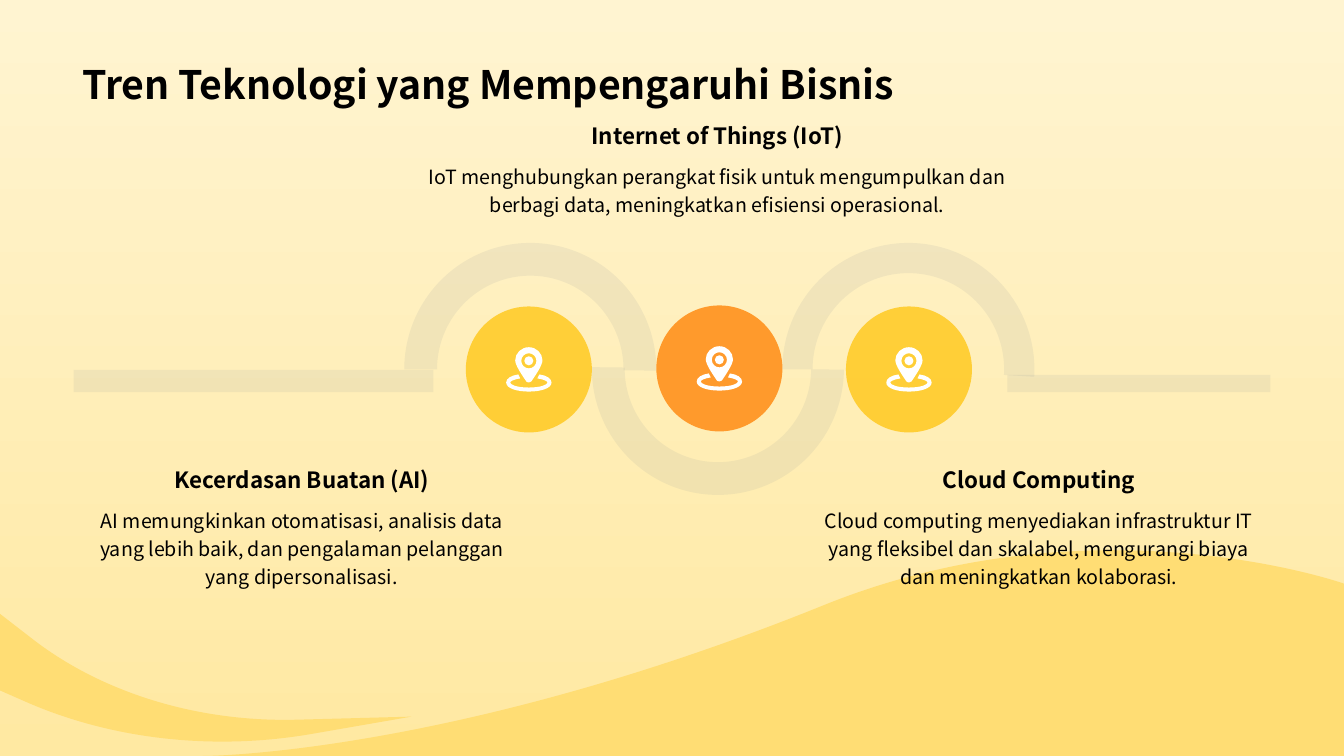
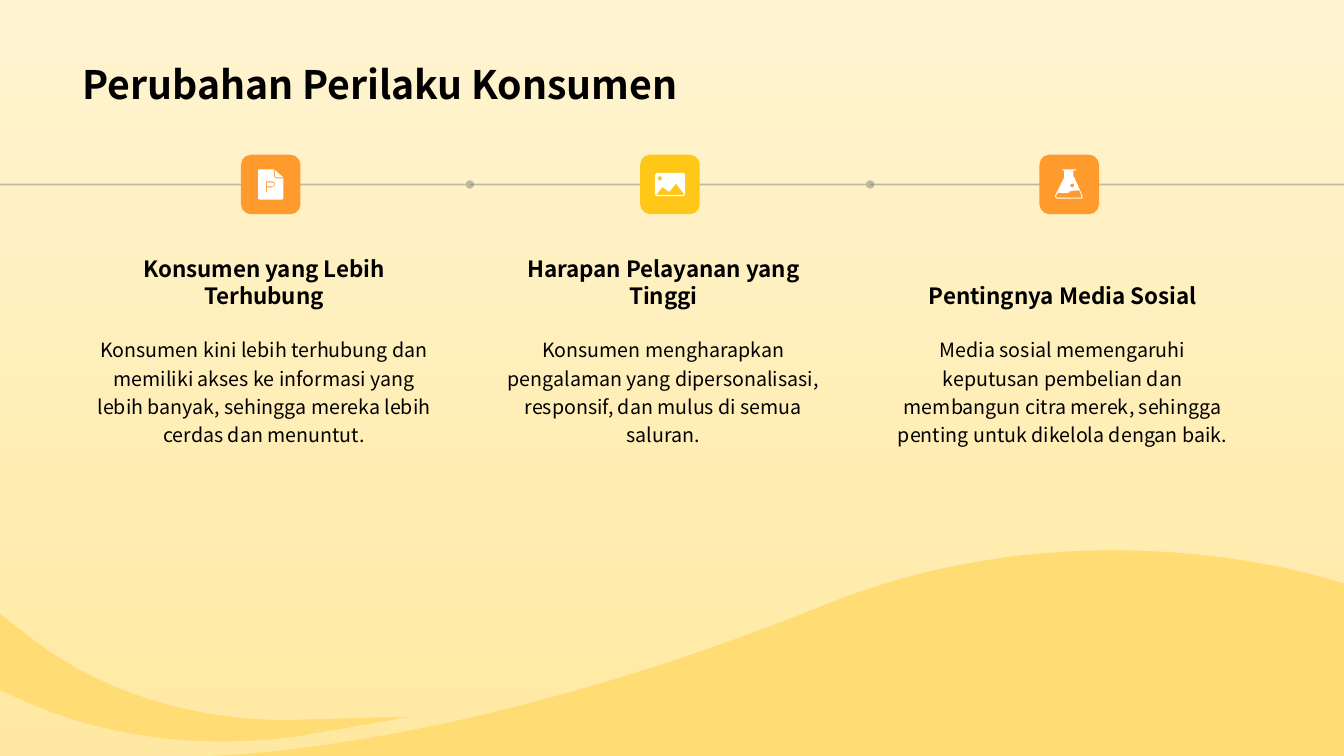
from pptx import Presentation
from pptx.dml.color import RGBColor
from pptx.enum.shapes import MSO_CONNECTOR, MSO_SHAPE
from pptx.enum.text import MSO_ANCHOR, MSO_AUTO_SIZE, PP_ALIGN
from pptx.oxml.ns import qn
from pptx.util import Inches, Pt
from lxml.etree import SubElement

FONT = "Noto Sans CJK SC"
BLACK = RGBColor(0x00, 0x00, 0x00)
WHITE = RGBColor(0xFF, 0xFF, 0xFF)
CREAM = RGBColor(0xFF, 0xF4, 0xD1)
BUTTER = RGBColor(0xFF, 0xE9, 0xA2)
WAVE = RGBColor(0xFF, 0xDD, 0x74)
YELLOW = RGBColor(0xFF, 0xC7, 0x17)
ORANGE = RGBColor(0xFF, 0x9A, 0x2C)
SLATE = RGBColor(0x77, 0x84, 0x95)
GRAY = RGBColor(0x80, 0x80, 0x80)

HEADING = {"size": Pt(16), "bold": True}
BODY = {"size": Pt(14), "bold": False}

TRENDS_TITLE = "Tren Teknologi yang Mempengaruhi Bisnis"
# heading, body, text left, text top, text width, circle left, circle top, colour, opacity
TRENDS = [
    ("Kecerdasan Buatan (AI)",
     "AI memungkinkan otomatisasi, analisis data yang lebih baik, dan pengalaman "
     "pelanggan yang dipersonalisasi.",
     0.73, 4.57, 4.53, 4.62, 3.04, YELLOW, 80),
    ("Internet of Things (IoT)",
     "IoT menghubungkan perangkat fisik untuk mengumpulkan dan berbagi data, "
     "meningkatkan efisiensi operasional.",
     4.08, 1.16, 6.07, 6.51, 3.03, ORANGE, 100),
    ("Cloud Computing",
     "Cloud computing menyediakan infrastruktur IT yang fleksibel dan skalabel, "
     "mengurangi biaya dan meningkatkan kolaborasi.",
     8.04, 4.57, 4.53, 8.39, 3.04, YELLOW, 80),
]
# left, top, rotation, adjustments
ARCS = [
    (4.01, 2.41, 0, (108, 0.34, 0.13)),
    (7.76, 2.41, 0, (108, 2, 0.12)),
    (5.87, 2.40, 180, (108.33, 0.34, 0.13)),
]
BARS = [(0.73, 3.67, 3.57, 0.22), (9.99, 3.72, 2.61, 0.17)]

# Outlines: a pair is a point, six numbers are a Bézier curve.
WAVES = [
    [(8.18, 6), (10.86, 4.92, 13.33, 5.79, 13.33, 5.79), (13.33, 7.5), (2.01, 7.5),
     (2.01, 7.5, 4.47, 7.5, 8.18, 6)],
    [(0, 6.09), (0.31, 6.33), (1, 6.87, 1.96, 7.17, 2.96, 7.14), (4.08, 7.11),
     (3.1, 7.28), (2.13, 7.45, 1.11, 7.34, 0.25, 6.96), (0, 6.85)],
]


def circle(cx, cy, r):
    k = 0.55 * r
    return [(cx, cy - r),
            (cx + k, cy - r, cx + r, cy - k, cx + r, cy),
            (cx + r, cy + k, cx + k, cy + r, cx, cy + r),
            (cx - k, cy + r, cx - r, cy + k, cx - r, cy),
            (cx - r, cy - k, cx - k, cy - r, cx, cy - r)]


# Icons: width, height and outlines in hundredths of an inch
PIN = (45, 44, [
    [(12, 27), (13, 28, 13, 30, 14, 31), (7, 32, 4, 34, 4, 35),
     (4, 37, 10, 40, 22.5, 40), (35, 40, 41, 37, 41, 35), (41, 34, 38, 32, 31, 31),
     (32, 30, 32, 28, 33, 27), (40, 28, 45, 31, 45, 35), (45, 41, 34, 44, 22.5, 44),
     (11, 44, 0, 41, 0, 35), (0, 31, 5, 28, 12, 27)],
    circle(22.5, 13.5, 4.5),
    circle(22.5, 13.5, 7.5),
    [(22.5, 0), (30, 0, 36, 6, 36, 13), (36, 18, 29, 28, 25, 34),
     (24, 34, 23, 35, 22.5, 35), (21, 35, 20, 34, 20, 34), (16, 28, 9, 18, 9, 13),
     (9, 6, 15, 0, 22.5, 0)],
])
DOCUMENT = (25, 30, [
    [(16, 0), (16, 7), (16, 8, 17, 9, 18, 9), (25, 9), (25, 29), (25, 30, 24, 30, 23, 30),
     (1, 30), (0, 30, 0, 30, 0, 29), (0, 2), (0, 1, 0, 0, 1, 0)],
    [(14, 12), (8, 12), (8, 23), (9, 23), (9, 18), (14, 18), (15, 18, 17, 16, 17, 15),
     (17, 13, 15, 12, 14, 12)],
    [(14, 13), (15, 13, 16, 14, 16, 15), (16, 16, 15, 17, 14, 17), (9, 17), (9, 13)],
    [(25, 8), (18, 8), (17, 8, 17, 8, 17, 7), (17, 1)],
])
PHOTO = (30, 23, [
    [(28, 0), (29, 0, 30, 1, 30, 2), (30, 21), (30, 22, 29, 23, 28, 23), (2, 23),
     (1, 23, 0, 22, 0, 21), (0, 2), (0, 1, 1, 0, 2, 0)],
    [(22, 11), (21, 11, 20, 11, 20, 12), (15, 18), (14, 19, 13, 19, 13, 18), (9, 15),
     (8, 14, 7, 14, 7, 15), (2, 21), (2, 22), (28, 22), (29, 21), (22, 12)],
    circle(5, 5.5, 2.25),
])
FLASK = (28, 30, [
    [(0, 27), (0, 26), (9, 8), (9, 1), (7, 1), (7, 0), (21, 0), (21, 1), (18, 1), (18, 7),
     (19, 8), (27, 26), (28, 28, 27, 29, 26, 29), (2, 29), (1, 29, 0, 28, 0, 27)],
    [(14, 22), (14, 23), (11, 24, 7, 24, 3, 23), (1, 26), (1, 27, 1, 28, 2, 28), (26, 28),
     (26, 27, 26, 27, 26, 26), (24, 21), (20, 21, 17, 21, 14, 22)],
    circle(17, 16, 2),
])

CONSUMERS_TITLE = "Perubahan Perilaku Konsumen"
CONSUMERS = [
    ("Konsumen yang Lebih Terhubung",
     "Konsumen kini lebih terhubung dan memiliki akses ke informasi yang lebih banyak, "
     "sehingga mereka lebih cerdas dan menuntut.", DOCUMENT, ORANGE),
    ("Harapan Pelayanan yang Tinggi",
     "Konsumen mengharapkan pengalaman yang dipersonalisasi, responsif, dan mulus di "
     "semua saluran.", PHOTO, YELLOW),
    ("Pentingnya Media Sosial",
     "Media sosial memengaruhi keputusan pembelian dan membangun citra merek, sehingga "
     "penting untuk dikelola dengan baik.", FLASK, ORANGE),
]
TIMELINE_Y = 1.83
TIMELINE_STOPS = [0, 4.66, 8.63, 13.33]


def set_opacity(shape, percent):
    color = shape.element.spPr.find(".//" + qn("a:srgbClr"))
    SubElement(color, qn("a:alpha")).set("val", str(percent * 1000))


def paint(shape, color, opacity=100):
    shape.shadow.inherit = False
    shape.fill.solid()
    shape.fill.fore_color.rgb = color
    shape.line.fill.background()
    if opacity < 100:
        set_opacity(shape, opacity)


def add_preset(slide, preset, box, color, opacity=100):
    shape = slide.shapes.add_shape(preset, *map(Inches, box))
    paint(shape, color, opacity)
    return shape


def bend_curves(shape, outlines):
    """Join the three line segments that stand for each curve into one Bézier segment."""
    segments = iter(shape.element.findall(".//" + qn("a:lnTo")))
    for outline in outlines:
        for part in outline[1:]:
            segment = next(segments)
            if len(part) == 6:
                segment.tag = qn("a:cubicBezTo")
                for _ in range(2):
                    following = next(segments)
                    following.getparent().remove(following)
                    segment.append(following[0])


def add_outlines(slide, outlines, color, left=0, top=0, unit=1):
    builder = None
    for outline in outlines:
        points = [(Inches(left + x * unit), Inches(top + y * unit))
                  for part in outline for x, y in zip(part[::2], part[1::2])]
        if builder is None:
            builder = slide.shapes.build_freeform(*points[0], scale=1.0)
        else:
            builder.move_to(*points[0])
        builder.add_line_segments(points[1:], close=True)
    shape = builder.convert_to_shape()
    bend_curves(shape, outlines)
    paint(shape, color)
    return shape


def add_icon(slide, icon, center_x, center_y):
    width, height, outlines = icon
    add_outlines(slide, outlines, WHITE, center_x - width / 200,
                 center_y - height / 200, 0.01)


def write(frame, text, style, align, anchor, spacing=None):
    frame.text = text
    frame.word_wrap = True
    frame.vertical_anchor = anchor
    paragraph = frame.paragraphs[0]
    paragraph.alignment = align
    paragraph.line_spacing = spacing
    font = paragraph.runs[0].font
    for key, value in {"name": FONT, **style}.items():
        setattr(font, key, value)
    font.color.rgb = BLACK


def add_text(slide, text, box, style, anchor, spacing=None):
    frame = slide.shapes.add_textbox(*map(Inches, box)).text_frame
    write(frame, text, style, PP_ALIGN.CENTER, anchor, spacing)
    frame.auto_size = MSO_AUTO_SIZE.SHAPE_TO_FIT_TEXT


def add_topic(slide, heading, body, left, top, width, body_offset):
    add_text(slide, body, (left, top + body_offset, width, 0.72), BODY,
             MSO_ANCHOR.TOP, 1.2)
    add_text(slide, heading, (left, top, width, 0.37), HEADING, MSO_ANCHOR.BOTTOM)


def add_titled_slide(deck, title):
    slide = deck.slides.add_slide(deck.slide_layouts[5])
    holder = slide.shapes.title
    holder.left, holder.top, holder.width, holder.height = map(
        Inches, (0.72, 0.14, 11.88, 0.98))
    write(holder.text_frame, title, {"size": Pt(28), "bold": True}, PP_ALIGN.LEFT,
          MSO_ANCHOR.BOTTOM)
    holder.text_frame.auto_size = MSO_AUTO_SIZE.NONE
    return slide


def set_backdrop(deck, slide):
    """Give the master its gradient and move the waves into the slide's layout."""
    fill = deck.slide_master.background.fill
    fill.gradient()
    fill.gradient_angle = 90
    for stop, color in zip(fill.gradient_stops, (BUTTER, CREAM)):
        stop.color.rgb = color
    for position, wave in enumerate(WAVES, start=2):
        shape = add_outlines(slide, [wave], WAVE)
        slide.slide_layout.shapes.element.insert(position, shape.element)


def fill_trends(slide):
    for left, top, rotation, adjustments in ARCS:
        arc = add_preset(slide, MSO_SHAPE.BLOCK_ARC, (left, top, 2.5, 2.51), SLATE, 10)
        arc.rotation = rotation
        for index, value in enumerate(adjustments):
            arc.adjustments[index] = value
    for bar in BARS:
        add_preset(slide, MSO_SHAPE.RECTANGLE, bar, SLATE, 10)
    size = 1.25
    for heading, body, left, top, width, x, y, color, opacity in TRENDS:
        add_preset(slide, MSO_SHAPE.OVAL, (x, y, size, size), color, opacity)
        add_icon(slide, PIN, x + size / 2, y + size / 2)
        add_topic(slide, heading, body, left, top, width, 0.38)


def add_timeline(slide):
    y = Inches(TIMELINE_Y)
    for start, end in zip(TIMELINE_STOPS, TIMELINE_STOPS[1:]):
        line = slide.shapes.add_connector(
            MSO_CONNECTOR.STRAIGHT, Inches(start), y, Inches(end), y)
        line.line.color.rgb = GRAY
        line.line.width = Pt(1.25)
        set_opacity(line, 50)
        properties = line.element.spPr
        if end != TIMELINE_STOPS[-1]:
            SubElement(properties.find(qn("a:ln")), qn("a:tailEnd")).set("type", "oval")
        SubElement(properties, qn("a:effectLst"))


def fill_consumers(slide):
    add_timeline(slide)
    size, width, pitch = 0.59, 3.54, 3.96
    for index, (heading, body, icon, color) in enumerate(CONSUMERS):
        shift = index * pitch
        tile_left = 2.39 + shift
        add_topic(slide, heading, body, 0.85 + shift, 2.74, width, 0.52)
        add_preset(slide, MSO_SHAPE.ROUNDED_RECTANGLE,
                   (tile_left, TIMELINE_Y - size / 2, size, size), color)
        add_icon(slide, icon, tile_left + size / 2, TIMELINE_Y)


def main():
    deck = Presentation()
    deck.slide_width, deck.slide_height = Inches(13.33), Inches(7.5)
    trends = add_titled_slide(deck, TRENDS_TITLE)
    set_backdrop(deck, trends)
    fill_trends(trends)
    fill_consumers(add_titled_slide(deck, CONSUMERS_TITLE))
    deck.save("out.pptx")


if __name__ == "__main__":
    main()
